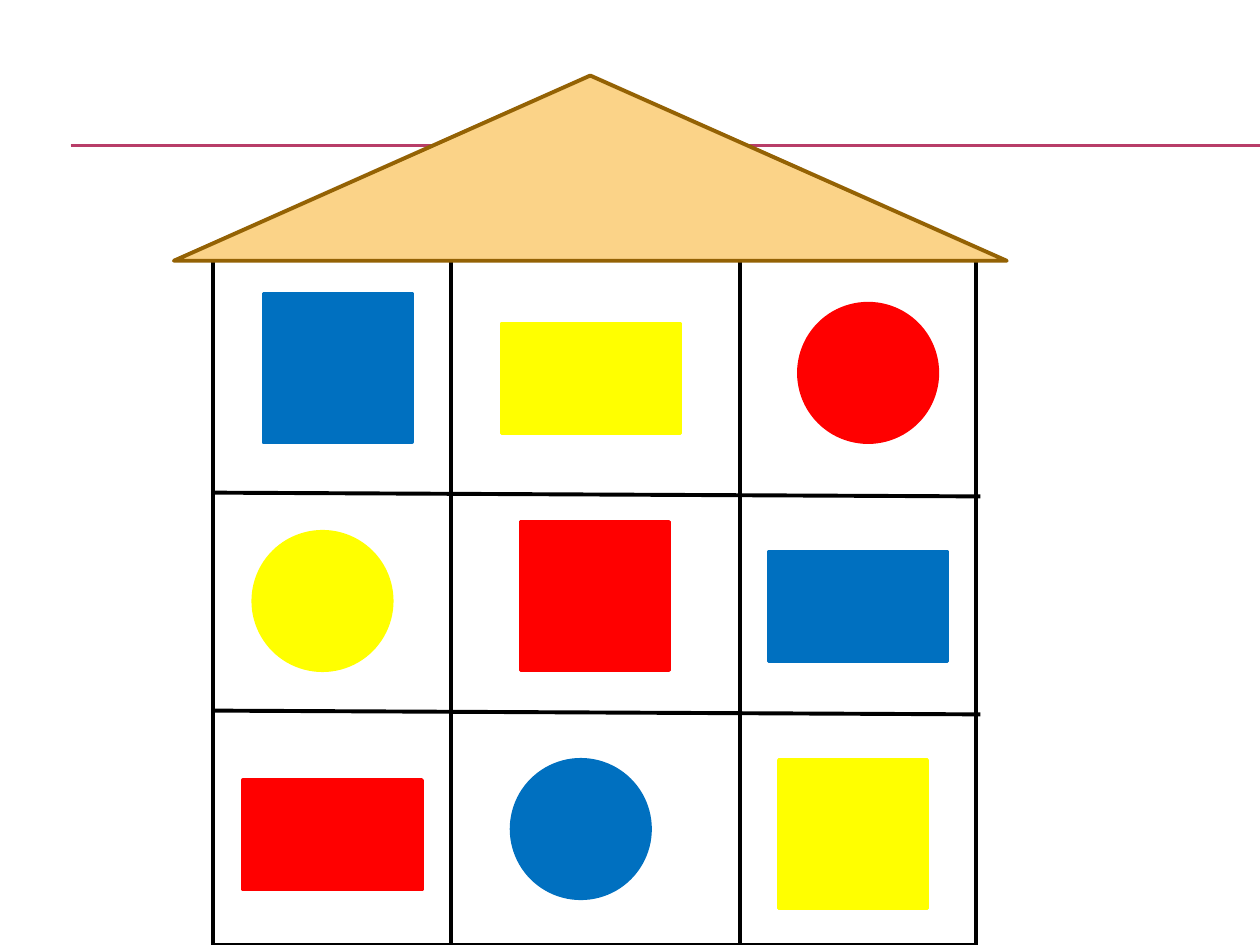
"""Build a slide of a house whose nine rooms each hold a coloured shape."""
from lxml import etree
from pptx import Presentation
from pptx.dml.color import RGBColor
from pptx.enum.shapes import MSO_CONNECTOR, MSO_SHAPE
from pptx.oxml.ns import qn
from pptx.util import Inches, Pt

STRAIGHT = MSO_CONNECTOR.STRAIGHT
RECT = MSO_SHAPE.RECTANGLE
OVAL = MSO_SHAPE.OVAL
TRIANGLE = MSO_SHAPE.ISOSCELES_TRIANGLE

COLORS = {
    "rule": "B83D68", "wall": "000000", "white": "FFFFFF",
    "roof": "FBD388", "eaves": "946204",
    "red": "FF0000", "yellow": "FFFF00", "blue": "0070C0",
}
SIZES = {"square": (RECT, 1.18, 1.18), "oblong": (RECT, 1.42, 0.87), "circle": (OVAL, 1.1, 1.1)}
W, H = 10, 7.5
LEFT, TOP, WIDTH = 1.69, 2.03, 6.06
COLUMNS = (3.58, 5.87)
FLOORS = (3.91, 5.64)
FLOOR_END, FLOOR_DROP = 7.78, 0.03

prs = Presentation()
prs.slide_width, prs.slide_height = Inches(W), Inches(H)
s = prs.slides.add_slide(prs.slide_layouts[6])


def add_line(x1, y1, x2, y2, color, width):
    ln = s.shapes.add_connector(STRAIGHT, Inches(x1), Inches(y1), Inches(x2), Inches(y2))
    ln.line.color.rgb = RGBColor.from_string(COLORS[color])
    ln.line.width = Pt(width)
    etree.SubElement(ln._element.spPr, qn("a:effectLst"))


def add_block(kind, x, y, w, h, fill, line, width):
    sp = s.shapes.add_shape(kind, Inches(x), Inches(y), Inches(w), Inches(h))
    sp.shadow.inherit = False
    sp.fill.solid()
    sp.fill.fore_color.rgb = RGBColor.from_string(COLORS[fill])
    sp.line.color.rgb = RGBColor.from_string(COLORS[line])
    sp.line.width = Pt(width)


for y in (1.15, 1.16):
    add_line(0.56, y, W, y, "rule", 0.75)

add_block(RECT, LEFT, TOP, WIDTH, H - TOP, "white", "wall", 2.25)
for x in COLUMNS:
    add_line(x, TOP, x, H, "wall", 2.25)
add_block(TRIANGLE, 1.38, 0.6, 6.61, 1.47, "roof", "eaves", 2.25)
for y in FLOORS:
    add_line(LEFT, y, FLOOR_END, y + FLOOR_DROP, "wall", 2.25)

rooms = [
    ("circle", "red", 6.34, 2.41),
    ("circle", "yellow", 2.01, 4.22),
    ("oblong", "blue", 6.1, 4.38),
    ("oblong", "yellow", 3.98, 2.57),
    ("oblong", "red", 1.93, 6.19),
    ("square", "blue", 2.09, 2.33),
    ("square", "yellow", 6.18, 6.03),
    ("circle", "blue", 4.06, 6.03),
    ("square", "red", 4.13, 4.14),
]
for name, color, x, y in rooms:
    kind, w, h = SIZES[name]
    add_block(kind, x, y, w, h, color, color, 2)

prs.save("out.pptx")
